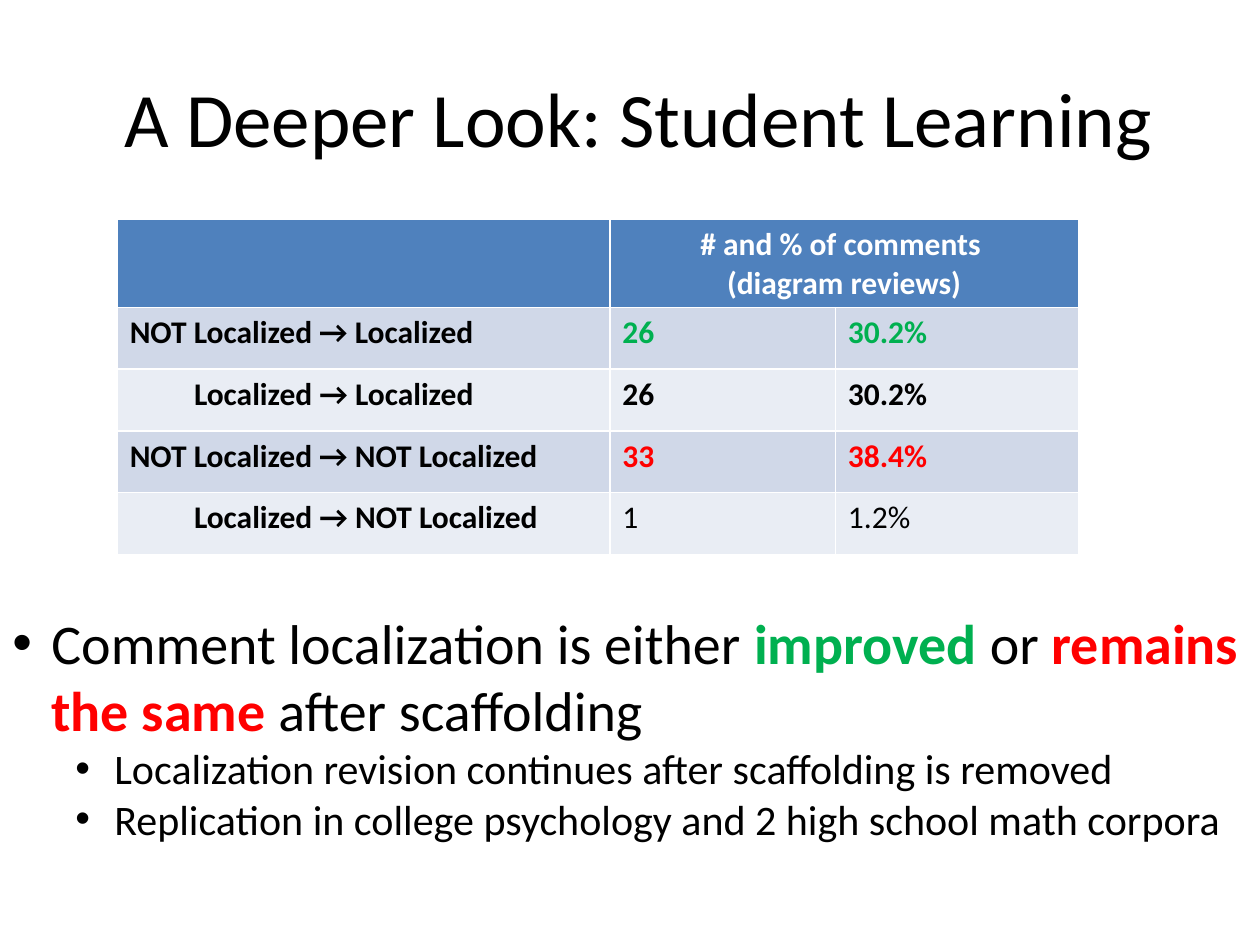
from pptx import Presentation
from pptx.dml.color import RGBColor
from pptx.enum.text import MSO_ANCHOR, PP_ALIGN
from pptx.oxml.xmlchemy import OxmlElement
from pptx.util import Inches, Pt

BLACK = RGBColor(0x00, 0x00, 0x00)
WHITE = RGBColor(0xFF, 0xFF, 0xFF)
GREEN = RGBColor(0x00, 0xB0, 0x50)
RED = RGBColor(0xFF, 0x00, 0x00)
HEADER_BLUE = RGBColor(0x4F, 0x81, 0xBD)
BANDS = [RGBColor(0xD0, 0xD8, 0xE8), RGBColor(0xE9, 0xED, 0xF4)]
FONT = "Calibri"

TITLE = "A Deeper Look: Student Learning"
HEADER_LINES = ["# and % of comments ", "(diagram reviews)"]
TRANSITIONS = [
    ("NOT Localized → Localized", 0, "26", "30.2%", GREEN, True),
    ("Localized → Localized", 0.51, "26", "30.2%", BLACK, True),
    ("NOT Localized → NOT Localized", 0, "33", "38.4%", RED, True),
    ("Localized → NOT Localized", 0.51, "1", "1.2%", BLACK, False),
]
BULLETS = [
    (0, 32, [
        ("Comment localization is either ", BLACK, False),
        ("improved", GREEN, True),
        (" or ", BLACK, False),
        ("remains the same ", RED, True),
        ("after scaffolding", BLACK, False),
    ]),
    (1, 24, [("Localization revision continues after scaffolding is removed", BLACK, False)]),
    (1, 24, [("Replication in college psychology and 2 high school math corpora", BLACK, False)]),
]
COLUMN_WIDTHS = [3.91, 1.79, 1.93]
HEADER_HEIGHT, ROW_HEIGHT = 0.7, 0.49
HANGING = 0.31


def add_run(paragraph, text, size, color=BLACK, bold=False):
    run = paragraph.add_run()
    run.text = text
    run.font.name = FONT
    run.font.size = Pt(size)
    run.font.bold = bold
    run.font.color.rgb = color


def next_paragraph(text_frame, index):
    return text_frame.add_paragraph() if index else text_frame.paragraphs[0]


def set_indent(paragraph, left, first=0):
    properties = paragraph._p.get_or_add_pPr()
    properties.set("marL", str(Inches(left)))
    properties.set("indent", str(Inches(first)))
    return properties


def add_text_box(slide, left, top, width, height):
    box = slide.shapes.add_textbox(Inches(left), Inches(top), Inches(width), Inches(height))
    box.text_frame.word_wrap = True
    return box.text_frame


def add_title(slide):
    text_frame = add_text_box(slide, 0.14, 0.3, 9.86, 1.25)
    text_frame.vertical_anchor = MSO_ANCHOR.MIDDLE
    paragraph = text_frame.paragraphs[0]
    paragraph.alignment = PP_ALIGN.CENTER
    add_run(paragraph, TITLE, 44)


def add_transition_table(slide):
    heights = [HEADER_HEIGHT] + [ROW_HEIGHT] * len(TRANSITIONS)
    table = slide.shapes.add_table(
        len(heights), len(COLUMN_WIDTHS), Inches(0.93), Inches(1.74),
        Inches(sum(COLUMN_WIDTHS)), Inches(sum(heights))).table
    for column, width in zip(table.columns, COLUMN_WIDTHS):
        column.width = Inches(width)
    for index, (row, height) in enumerate(zip(table.rows, heights)):
        row.height = Inches(height)
        for cell in row.cells:
            cell.fill.solid()
            cell.fill.fore_color.rgb = BANDS[(index - 1) % 2] if index else HEADER_BLUE

    header = table.cell(0, 1)
    header.merge(table.cell(0, 2))
    for index, line in enumerate(HEADER_LINES):
        paragraph = next_paragraph(header.text_frame, index)
        paragraph.alignment = PP_ALIGN.CENTER
        add_run(paragraph, line, 18, WHITE, True)

    for row, (label, indent, count, share, color, bold) in enumerate(TRANSITIONS, 1):
        label_paragraph = table.cell(row, 0).text_frame.paragraphs[0]
        set_indent(label_paragraph, indent)
        add_run(label_paragraph, label, 18, BLACK, True)
        for column, value in enumerate((count, share), 1):
            add_run(table.cell(row, column).text_frame.paragraphs[0], value, 18, color, bold)


def add_bullets(slide):
    text_frame = add_text_box(slide, 0, 4.78, 10, 2.39)
    for index, (level, size, runs) in enumerate(BULLETS):
        paragraph = next_paragraph(text_frame, index)
        paragraph.level = level
        properties = set_indent(paragraph, HANGING + 0.5 * level, -HANGING)
        bullet_font = OxmlElement("a:buFont")
        bullet_font.set("typeface", "Arial")
        bullet = OxmlElement("a:buChar")
        bullet.set("char", "•")
        properties.extend([bullet_font, bullet])
        for text, color, bold in runs:
            add_run(paragraph, text, size, color, bold)


def main():
    presentation = Presentation()
    presentation.slide_width, presentation.slide_height = Inches(10), Inches(7.5)
    slide = presentation.slides.add_slide(presentation.slide_layouts[6])
    add_title(slide)
    add_transition_table(slide)
    add_bullets(slide)
    presentation.save("out.pptx")


if __name__ == "__main__":
    main()
